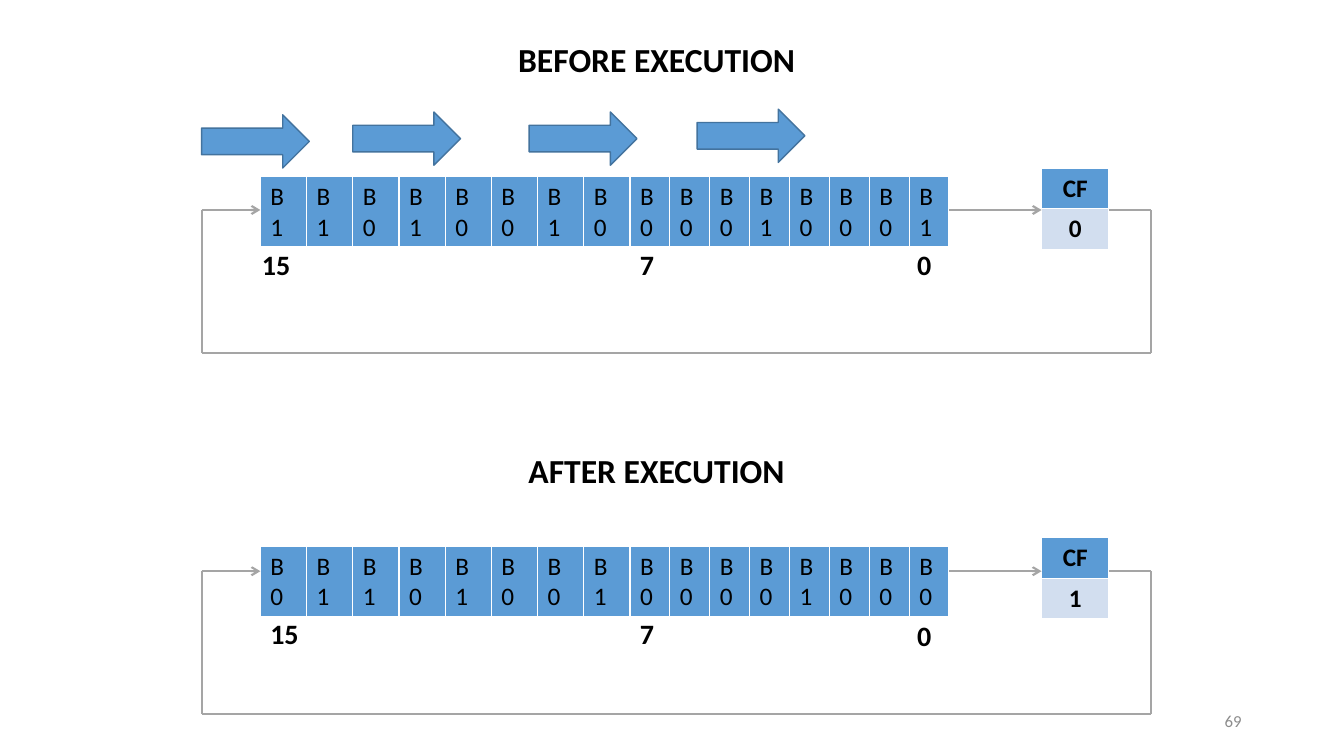
from lxml import etree
from pptx import Presentation
from pptx.dml.color import RGBColor
from pptx.enum import shapes, text
from pptx.oxml import ns
from pptx.util import Pt

BLUE = RGBColor(0x5B, 0x9B, 0xD5)
DARK_BLUE = RGBColor(0x43, 0x73, 0x9E)
PALE_BLUE = RGBColor(0xD2, 0xDE, 0xEF)
LINE_GRAY = RGBColor(0xA5, 0xA5, 0xA5)
NUMBER_GRAY = RGBColor(0x8C, 0x8C, 0x8C)
BLACK = RGBColor(0, 0, 0)

LEFT, ALIGN_CENTER, RIGHT = text.PP_ALIGN.LEFT, text.PP_ALIGN.CENTER, text.PP_ALIGN.RIGHT

presentation = Presentation()
presentation.slide_width, presentation.slide_height = Pt(960), Pt(540)
slide = presentation.slides.add_slide(presentation.slide_layouts[6])


def write(frame, wording, size, bold=True, color=BLACK, alignment=LEFT):
    paragraph = frame.paragraphs[0]
    paragraph.alignment = alignment
    run = paragraph.add_run()
    run.text = wording
    font_format = {"name": "Calibri", "size": Pt(size), "bold": bold}
    for attribute, value in font_format.items():
        setattr(run.font, attribute, value)
    run.font.color.rgb = color


def add_label(wording, left, top, width, height, size, **style):
    frame = slide.shapes.add_textbox(Pt(left), Pt(top), Pt(width), Pt(height)).text_frame
    frame.word_wrap = True
    frame.vertical_anchor = text.MSO_ANCHOR.MIDDLE
    write(frame, wording, size, **style)


states = [
    {"heading": "BEFORE EXECUTION", "heading_top": 24, "register_top": 126, "loop_top": 150,
     "high": "11010010", "low": "00010001", "carry": "0",
     "indexes": [("15", 180, 173), ("7", 450, 173), ("0", 648, 173)]},
    {"heading": "AFTER EXECUTION", "heading_top": 318, "register_top": 390, "loop_top": 408,
     "high": "01101001", "low": "00001000", "carry": "1",
     "indexes": [("15", 186, 436.5), ("7", 450, 436.5), ("0", 648, 438)]},
]

for state in states:
    add_label(state["heading"], 362, state["heading_top"], 214, 36, 24, alignment=ALIGN_CENTER)

    top = state["register_top"]
    high_byte = [["B" + bit for bit in state["high"]]]
    low_byte = [["B" + bit for bit in state["low"]]]
    carry_flag = [["CF"], [state["carry"]]]
    grids = [
        (high_byte, 186, top, 33, 50, False, LEFT),
        (low_byte, 450, top, 28.5, 50, False, LEFT),
        (carry_flag, 744, top - 6, 48, 29, True, ALIGN_CENTER),
    ]
    for rows, left, grid_top, cell_width, cell_height, bold, alignment in grids:
        row_count, column_count = len(rows), len(rows[0])
        table = slide.shapes.add_table(
            row_count, column_count, Pt(left), Pt(grid_top),
            Pt(cell_width * column_count), Pt(cell_height * row_count)).table
        for row_index, row in enumerate(rows):
            for column_index, wording in enumerate(row):
                cell = table.cell(row_index, column_index)
                cell.fill.solid()
                cell.fill.fore_color.rgb = PALE_BLUE if row_index else BLUE
                write(cell.text_frame, wording, 18, bold=bold, alignment=alignment)

    loop_top = state["loop_top"]
    loop_bottom = loop_top + 102
    segments = [
        (678, loop_top, 744, loop_top, True),
        (792, loop_top, 822, loop_top, False),
        (822, loop_top, 822, loop_bottom, False),
        (822, loop_bottom, 144, loop_bottom, False),
        (144, loop_bottom, 144, loop_top, False),
        (144, loop_top, 186, loop_top, True),
    ]
    for start_x, start_y, end_x, end_y, has_arrowhead in segments:
        connector = slide.shapes.add_connector(
            shapes.MSO_CONNECTOR.STRAIGHT, Pt(start_x), Pt(start_y), Pt(end_x), Pt(end_y))
        connector.line.color.rgb = LINE_GRAY
        connector.line.width = Pt(1.5)
        if has_arrowhead:
            line = connector.line._get_or_add_ln()
            etree.SubElement(line, ns.qn("a:tailEnd"), type="arrow")
        etree.SubElement(connector._element.spPr, ns.qn("a:effectLst"))

    for index, left, index_top in state["indexes"]:
        add_label(index, left, index_top, 42, 31.5, 20)

for left, top in [(144, 82), (252, 80), (378, 80), (498, 78)]:
    arrow = slide.shapes.add_shape(
        shapes.MSO_SHAPE.RIGHT_ARROW, Pt(left), Pt(top), Pt(77), Pt(38))
    arrow.shadow.inherit = False
    arrow.fill.solid()
    arrow.fill.fore_color.rgb = BLUE
    arrow.line.color.rgb = DARK_BLUE
    arrow.line.width = Pt(1)

add_label("69", 678, 500.5, 216, 29, 12, bold=False, color=NUMBER_GRAY, alignment=RIGHT)

presentation.save("out.pptx")
